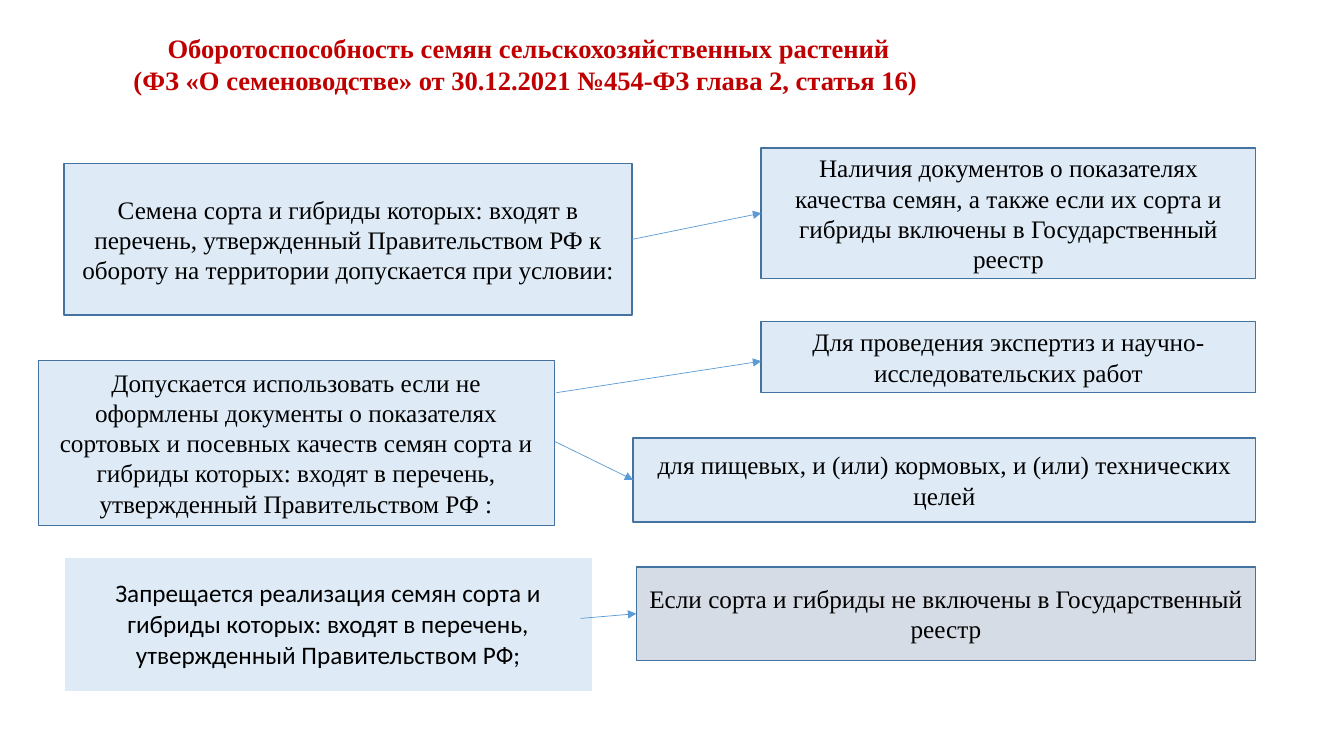
import pptx
import pptx.util
import pptx.dml.color
import pptx.enum.shapes
import pptx.enum.text
import pptx.oxml.ns
import lxml.etree
from dataclasses import dataclass

PX = 9525  # EMU per px, slide is 1280 x 720 px
LEFT_SIDE, RIGHT_SIDE = 1, 3  # connection sites of a rectangle
RIGHT_EDGE = 1196  # shared right edge of the answer boxes


@dataclass(frozen=True)
class Theme:
    red: str = "C00000"
    black: str = "000000"
    pale_blue: str = "DEEBF7"
    grey: str = "D6DCE5"
    border: str = "43739E"
    arrow: str = "5B9BD5"
    serif: str = "Times New Roman"
    sans: str = "Calibri"
    title_pt: int = 19
    body_pt: int = 18
    arrow_pt: float = 0.5


THEME = Theme()


def px(*values):
    return [pptx.util.Emu(v * PX) for v in values]


def rgb(color):
    return pptx.dml.color.RGBColor.from_string(color)


def write(tf, lines, size, font, color, bold=False):
    """Fill a text frame with centred paragraphs, one run each."""
    tf.word_wrap = True
    for i, line in enumerate(lines):
        p = tf.paragraphs[0] if i == 0 else tf.add_paragraph()
        p.alignment = pptx.enum.text.PP_ALIGN.CENTER
        r = p.add_run()
        r.text = line
        r.font.size = pptx.util.Pt(size)
        r.font.name = font
        r.font.bold = bold
        r.font.color.rgb = rgb(color)


def add_title(s, lines, x, y, w, h):
    sp = s.shapes.title
    sp.left, sp.top, sp.width, sp.height = px(x, y, w, h)
    tf = sp.text_frame
    tf.vertical_anchor = pptx.enum.text.MSO_ANCHOR.MIDDLE
    write(tf, lines, THEME.title_pt, THEME.serif, THEME.red, bold=True)


def add_box(s, text, x, y, w, h, fill=THEME.pale_blue, line_pt=1):
    sp = s.shapes.add_shape(
        pptx.enum.shapes.MSO_SHAPE.RECTANGLE, *px(x, y, w, h))
    sp.shadow.inherit = False
    sp.fill.solid()
    sp.fill.fore_color.rgb = rgb(fill)
    sp.line.color.rgb = rgb(THEME.border)
    sp.line.width = pptx.util.Pt(line_pt)
    tf = sp.text_frame
    tf.vertical_anchor = pptx.enum.text.MSO_ANCHOR.MIDDLE
    write(tf, [text], THEME.body_pt, THEME.serif, THEME.black)
    return sp


def add_cell_table(s, text, x, y, w, h):
    table = s.shapes.add_table(1, 1, *px(x, y, w, h)).table
    cell = table.cell(0, 0)
    cell.fill.solid()
    cell.fill.fore_color.rgb = rgb(THEME.pale_blue)
    cell.vertical_anchor = pptx.enum.text.MSO_ANCHOR.MIDDLE
    write(cell.text_frame, [text], THEME.body_pt, THEME.sans, THEME.black)


def add_arrow(s, start, end, source=None, target=None):
    """Draw an arrow; a given source or target box is joined at its side."""
    cxn = s.shapes.add_connector(
        pptx.enum.shapes.MSO_CONNECTOR.STRAIGHT, *px(*start, *end))
    if source is not None:
        cxn.begin_connect(source, RIGHT_SIDE)
    if target is not None:
        cxn.end_connect(target, LEFT_SIDE)
    cxn.line.color.rgb = rgb(THEME.arrow)
    cxn.line.width = pptx.util.Pt(THEME.arrow_pt)
    qn = pptx.oxml.ns.qn
    lxml.etree.SubElement(
        cxn.line._get_or_add_ln(), qn("a:tailEnd"), type="triangle")
    lxml.etree.SubElement(cxn._element.spPr, qn("a:effectLst"))


def main():
    prs = pptx.Presentation()
    prs.slide_width, prs.slide_height = px(1280, 720)
    s = prs.slides.add_slide(prs.slide_layouts[5])

    # Title
    add_title(s, [
        "Оборотоспособность семян сельскохозяйственных растений",
        "(ФЗ «О семеноводстве» от 30.12.2021 №454-ФЗ глава 2, статья 16) ",
    ], 8, 21, 991, 79)

    # Prohibited sale
    add_cell_table(
        s, "Запрещается реализация семян сорта и гибриды которых: входят в "
        "перечень, утвержденный Правительством РФ;", 61, 531, 503, 128)

    # Permitted circulation
    listed = add_box(
        s, "Семена сорта и гибриды которых: входят в перечень, утвержденный "
        "Правительством РФ к обороту на территории допускается при условии:",
        61, 156, 541, 144)

    # Conditions and purposes on the right
    answers = [
        ("Для проведения экспертиз и научно-исследовательских работ",
         725, 306, 68, THEME.pale_blue),
        ("Наличия документов о показателях качества семян, а также если их "
         "сорта и гибриды включены в Государственный реестр",
         725, 141, 124, THEME.pale_blue),
        ("для пищевых, и (или) кормовых, и (или) технических целей",
         603, 417, 80, THEME.pale_blue),
        ("Если сорта и гибриды не включены в Государственный реестр",
         606, 540, 89, THEME.grey),
    ]
    research, documents, food, unlisted = [
        add_box(s, text, x, y, RIGHT_EDGE - x, h, fill)
        for text, x, y, h, fill in answers]

    # Arrows; the first one starts beneath the box added after it
    add_arrow(s, (503, 408), (603, 457), target=food)
    add_arrow(s, (602, 228), (725, 203), source=listed, target=documents)
    add_arrow(s, (553, 589), (606, 585), target=unlisted)

    # Use without quality documents
    add_box(
        s, "Допускается использовать если не оформлены документы о "
        "показателях сортовых и посевных качеств семян сорта и гибриды "
        "которых: входят в перечень, утвержденный Правительством РФ :",
        36, 343, 492, 157, line_pt=0.25)
    add_arrow(s, (530, 374), (research.left // PX, 344))

    prs.save("out.pptx")


if __name__ == "__main__":
    main()
